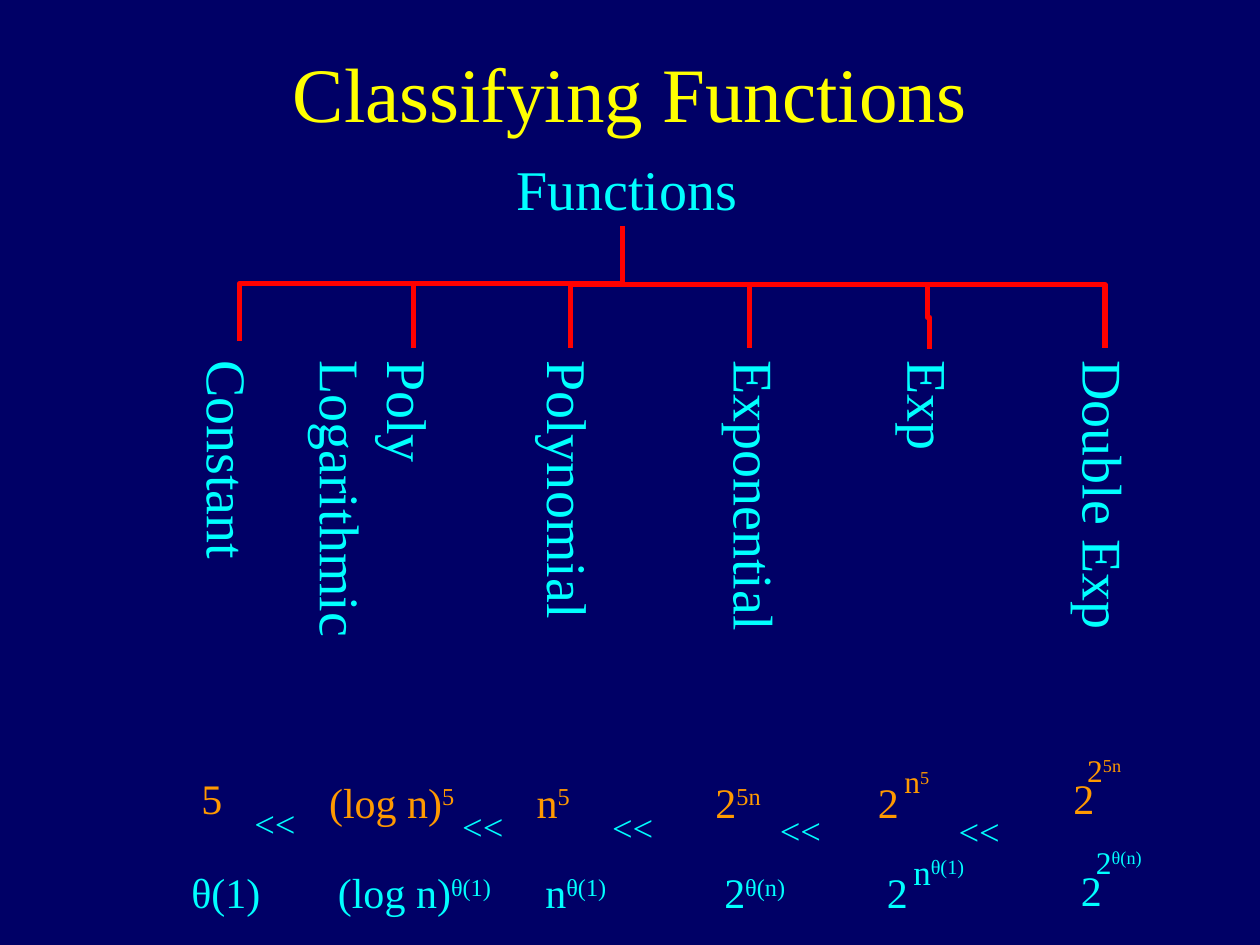
"""Build the slide that classifies functions by their growth rate."""
import pptx
import pptx.dml.color
import pptx.enum.shapes
import pptx.enum.text
import pptx.oxml.ns
import pptx.util
from lxml import etree

Inches = pptx.util.Inches
FONT = "Times New Roman"
NAVY, YELLOW, CYAN, ORANGE, RED = "000066", "FFFF00", "00FFFF", "FF9900", "FF0000"
LABEL_TOP, LABEL_HEIGHT, BRANCH_TOP, BRANCH_BOTTOM = 2.76, 0.63, 2.26, 2.76

CLASSES = [  # name, centre, length, right margin
    ("Poly Logarithmic", 3.25, 3.32, 0.4),
    ("Polynomial", 4.52, 2.25, 0),
    ("Exponential", 6.0, 2.35, 0),
    ("Exp", 7.38, 0.92, 0),
    ("Double Exp", 8.77, 2.34, 0),
    ("Constant", 1.82, 1.93, 0),
]
STRAIGHT_BRANCHES = [3.28, 4.53, 5.95]
ELBOWS = [
    ("bentConnector3", (2.96, 0.73, 3.88, 3.77), 270),
    ("bentConnector2", (4.53, 2.26, 8.77, 2.76), 0),
    ("bentConnector3", (7.62, 2.51, 7.12, 2.53), 90),
]
EXAMPLES = [
    (" (log n)", "5", 24, 2.43, 6.11, 1.29),
    ("n", "5", 24, 4.16, 6.11, 0.48),
    ("2", "5n", 24, 5.58, 6.11, 0.59),
    ("5", "", 24, 1.5, 6.08, 0.37),
    ("2", "", 24, 6.87, 6.11, 0.37),
    ("n", "5", 18, 7.08, 6.0, 0.41),
    ("2", "5n", 18, 8.53, 5.91, 0.49),
    ("2", "", 24, 8.42, 6.08, 0.37),
]
COMPARISONS = [
    ("", "<<", 36, left, top, 0.58)
    for left, top in [(1.92, 6.25), (3.57, 6.27), (4.76, 6.28), (6.09, 6.3), (7.51, 6.31)]
]
GROWTH_RATES = [
    (" (log n)", "θ(1)", 24, 2.5, 6.83, 1.55),
    ("n", "θ(1)", 24, 4.23, 6.83, 0.73),
    ("2", "θ(n)", 24, 5.65, 6.83, 0.73),
    ("θ(1)", "", 24, 1.42, 6.83, 0.75),
    ("2", "", 24, 6.94, 6.83, 0.37),
    ("n", "θ(1)", 20, 7.15, 6.7, 0.64),
    ("2", "θ(n)", 18, 8.6, 6.64, 0.6),
    ("2", "", 24, 8.48, 6.81, 0.37),
]
HEIGHTS = {18: 0.4, 20: 0.43, 24: 0.5, 36: 0.5}


def rgb(colour):
    return pptx.dml.color.RGBColor.from_string(colour)


def add_run(paragraph, text, size, colour, raised=False):
    run = paragraph.add_run()
    run.text = text
    run.font.name = FONT
    run.font.size = pptx.util.Pt(size)
    run.font.color.rgb = rgb(colour)
    if raised:
        run.font._element.set("baseline", "30000")


def add_text(shapes, box, base, exponent, size, colour, margin_right=0):
    label = shapes.add_textbox(*map(Inches, box))
    label.text_frame.word_wrap = True
    label.text_frame.margin_right = Inches(margin_right)
    for text, raised in ((base, False), (exponent, True)):
        if text:
            add_run(label.text_frame.paragraphs[0], text, size, colour, raised)
    return label


def add_branch(shapes, kind, ends):
    branch = shapes.add_connector(kind, *map(Inches, ends))
    branch.line.color.rgb = rgb(RED)
    branch.line.width = pptx.util.Pt(3)
    etree.SubElement(branch._element.spPr, pptx.oxml.ns.qn("a:effectLst"))
    return branch


def main():
    deck = pptx.Presentation()
    deck.slide_width, deck.slide_height = Inches(10), Inches(7.5)
    slide = deck.slides.add_slide(deck.slide_layouts[5])
    slide.background.fill.solid()
    slide.background.fill.fore_color.rgb = rgb(NAVY)

    title = slide.shapes.title
    title.left, title.top, title.width, title.height = map(Inches, (0.75, 0.1, 8.5, 1.25))
    title.text_frame.vertical_anchor = pptx.enum.text.MSO_ANCHOR.MIDDLE
    heading = title.text_frame.paragraphs[0]
    heading.alignment = pptx.enum.text.PP_ALIGN.CENTER
    add_run(heading, "Classifying Functions", 44, YELLOW)

    add_text(slide.shapes, (4, 1.18, 1.95, LABEL_HEIGHT), "Functions", "", 32, CYAN)
    for name, centre, length, margin_right in CLASSES:
        box = (centre - length / 2, LABEL_TOP + (length - LABEL_HEIGHT) / 2, length, LABEL_HEIGHT)
        label = add_text(slide.shapes, box, name, "", 32, CYAN, margin_right)
        label.rotation = 90

    kinds = pptx.enum.shapes.MSO_CONNECTOR
    for preset, ends, angle in ELBOWS:
        elbow = add_branch(slide.shapes, kinds.ELBOW, ends)
        elbow._element.spPr.prstGeom.set("prst", preset)
        elbow._element.spPr.xfrm.set("rot", str(angle * 60000))
    for x in STRAIGHT_BRANCHES:
        add_branch(slide.shapes, kinds.STRAIGHT, (x, BRANCH_TOP, x, BRANCH_BOTTOM))

    for row, colour in ((EXAMPLES, ORANGE), (COMPARISONS, CYAN), (GROWTH_RATES, CYAN)):
        group = slide.shapes.add_group_shape()
        for base, exponent, size, left, top, width in row:
            add_text(group.shapes, (left, top, width, HEIGHTS[size]), base, exponent, size, colour)

    deck.save("out.pptx")


if __name__ == "__main__":
    main()
